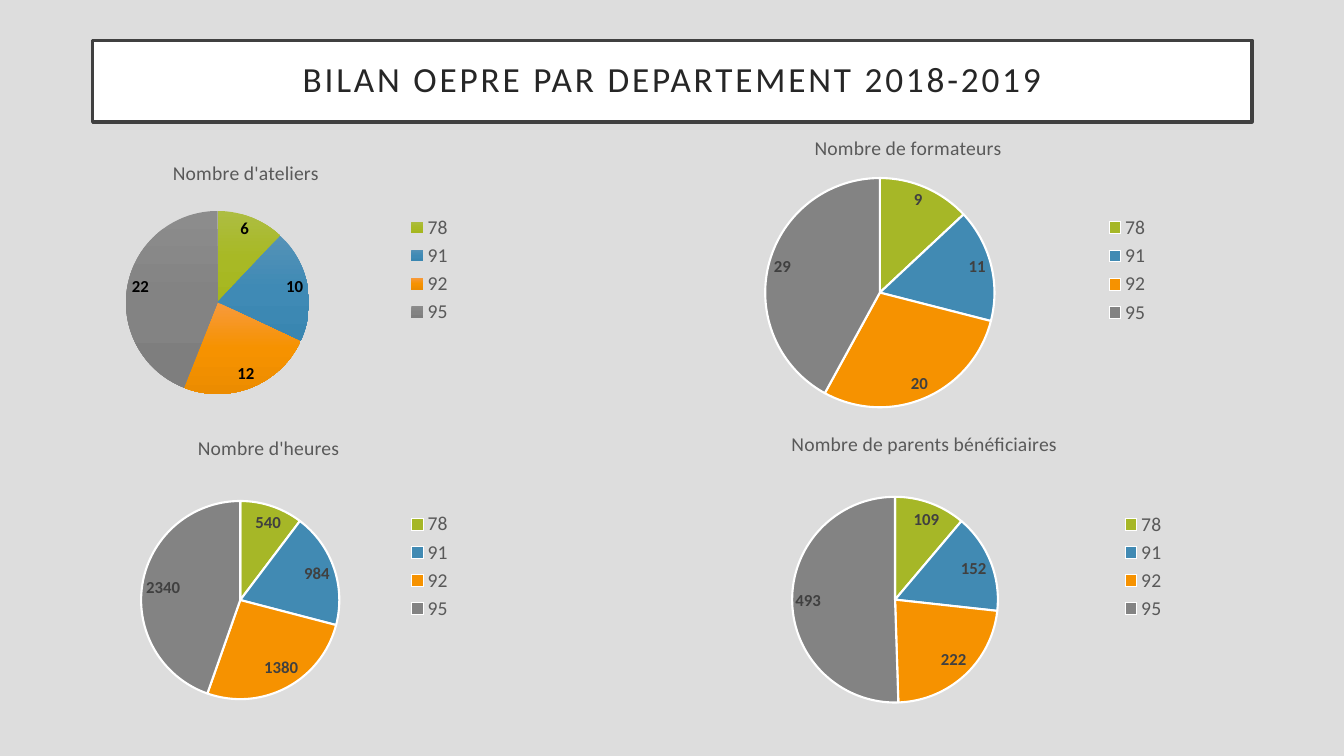
from copy import deepcopy
from dataclasses import dataclass

from pptx import Presentation
from pptx.chart.chart import Chart
from pptx.chart.data import CategoryChartData
from pptx.chart.point import Point
from pptx.chart.series import PieSeries
from pptx.dml.color import RGBColor
from pptx.enum.chart import XL_CHART_TYPE, XL_LABEL_POSITION, XL_LEGEND_POSITION
from pptx.enum.text import MSO_ANCHOR, MSO_AUTO_SIZE, PP_ALIGN
from pptx.oxml import parse_xml
from pptx.oxml.ns import nsdecls, qn
from pptx.slide import Slide
from pptx.util import Emu, Inches, Pt

PIE = XL_CHART_TYPE.PIE
BEST_FIT = XL_LABEL_POSITION.BEST_FIT
LEGEND_RIGHT = XL_LEGEND_POSITION.RIGHT
MIDDLE = MSO_ANCHOR.MIDDLE
CENTER = PP_ALIGN.CENTER

WHITE = RGBColor(0xFF, 0xFF, 0xFF)
BLACK = RGBColor(0x00, 0x00, 0x00)
BACKGROUND = RGBColor(0xDD, 0xDD, 0xDD)
TITLE_INK = RGBColor(0x26, 0x26, 0x26)
DARK_GREY = RGBColor(0x40, 0x40, 0x40)
TEXT_GREY = RGBColor(0x59, 0x59, 0x59)
SLICE_COLORS = (
    RGBColor(0xA6, 0xB7, 0x27),
    RGBColor(0x41, 0x8A, 0xB3),
    RGBColor(0xF6, 0x92, 0x00),
    RGBColor(0x83, 0x83, 0x83),
)
SLICE_GRADIENTS = (
    (RGBColor(0xAD, 0xBD, 0x42), RGBColor(0xA8, 0xB9, 0x25), RGBColor(0xA5, 0xB6, 0x1F)),
    (RGBColor(0x55, 0x92, 0xB7), RGBColor(0x3F, 0x8A, 0xB5), RGBColor(0x39, 0x86, 0xB1)),
    (RGBColor(0xF7, 0x9A, 0x3D), RGBColor(0xF6, 0x92, 0x00), RGBColor(0xEC, 0x8C, 0x00)),
    (RGBColor(0x8C, 0x8C, 0x8C), RGBColor(0x83, 0x83, 0x83), RGBColor(0x7E, 0x7E, 0x7E)),
)

FONT = "Calibri"
DEPARTMENTS = ("78", "91", "92", "95")
SLIDE_WIDTH, SLIDE_HEIGHT = Inches(13.33), Inches(7.5)
COLUMNS, ROWS = 160, 90


@dataclass(frozen=True)
class Box:
    """An area in grid columns and rows."""
    left: float
    top: float
    width: float
    height: float

    def place(self) -> tuple[Emu, Emu, Emu, Emu]:
        column, row = SLIDE_WIDTH / COLUMNS, SLIDE_HEIGHT / ROWS
        return (Emu(int(self.left * column)), Emu(int(self.top * row)),
                Emu(int(self.width * column)), Emu(int(self.height * row)))


@dataclass(frozen=True)
class DepartmentPie:
    title: str
    values: tuple[int, ...]
    frame: Box
    circle: Box
    label_color: RGBColor = DARK_GREY
    shaded: bool = False


TITLE_BOX = Box(11.04, 4.8, 138, 9.72)
PIES = (
    DepartmentPie("Nombre d'ateliers", (6, 10, 12, 22),
                  Box(3.48, 17.28, 51.6, 29.64), Box(15, 25.12, 21.8, 21.8), BLACK, True),
    DepartmentPie("Nombre de formateurs", (9, 11, 20, 29),
                  Box(78.12, 14.16, 60, 36), Box(91.1, 21.2, 27.3, 27.3)),
    DepartmentPie("Nombre d'heures", (540, 984, 1380, 2340),
                  Box(8.88, 49.92, 46.2, 35.04), Box(16.8, 59.65, 23.6, 23.6)),
    DepartmentPie("Nombre de parents bénéficiaires", (109, 152, 222, 493),
                  Box(80.04, 49.44, 60, 36), Box(94.3, 59.15, 24.5, 24.5)),
)


def apply_format(target: object, values: dict[str, object]) -> None:
    for name, value in values.items():
        setattr(target, name, value)


def style_font(font: object, size: float, color: RGBColor, bold: bool = False) -> None:
    apply_format(font, {"name": FONT, "size": Pt(size), "bold": bold})
    font.color.rgb = color


def add_title(slide: Slide, text: str) -> None:
    title = slide.shapes.title
    apply_format(title, dict(zip(("left", "top", "width", "height"), TITLE_BOX.place())))
    title.fill.solid()
    title.fill.fore_color.rgb = WHITE
    title.line.color.rgb = DARK_GREY
    title.line.width = Pt(2.5)
    margins = dict.fromkeys(
        ("margin_left", "margin_top", "margin_right", "margin_bottom"), Inches(0.2))
    apply_format(title.text_frame, {
        "text": text, "word_wrap": True, "vertical_anchor": MIDDLE,
        "auto_size": MSO_AUTO_SIZE.NONE, **margins})
    paragraph = title.text_frame.paragraphs[0]
    apply_format(paragraph, {"alignment": CENTER, "line_spacing": 0.9})
    run = paragraph.runs[0]
    style_font(run.font, 25.2, TITLE_INK)
    run.font._element.set("spc", "200")  # letter spacing of 2 points


def place_circle(chart: Chart, pie: DepartmentPie) -> None:
    """Fix the pie inside its frame, as shares of the frame."""
    frame, circle = pie.frame, pie.circle
    shares = {
        "x": (circle.left - frame.left) / frame.width,
        "y": (circle.top - frame.top) / frame.height,
        "w": circle.width / frame.width,
        "h": circle.height / frame.height,
    }
    modes = '<c:xMode val="edge"/><c:yMode val="edge"/>'
    sizes = "".join(f'<c:{name} val="{share:.4f}"/>' for name, share in shares.items())
    layout = parse_xml(
        f'<c:layout {nsdecls("c")}><c:manualLayout><c:layoutTarget val="inner"/>'
        f"{modes}{sizes}</c:manualLayout></c:layout>")
    plot_area = chart._chartSpace.chart.plotArea
    for automatic in plot_area.findall(qn("c:layout")):
        plot_area.remove(automatic)
    plot_area.insert(0, layout)


def shade_slice(series: PieSeries, point: Point, colors: tuple[RGBColor, ...]) -> None:
    fill = point.format.fill
    fill.gradient()
    fill.gradient_angle = 270
    stop_list = list(series._element.iter(qn("a:gsLst")))[-1]
    stop_list.append(deepcopy(stop_list[0]))
    for stop, position, color in zip(fill.gradient_stops, (0, 0.5, 1), colors):
        stop.position = position
        stop.color.rgb = color
    point.format.line.fill.background()


def color_slice(point: Point, color: RGBColor) -> None:
    point.format.fill.solid()
    point.format.fill.fore_color.rgb = color
    point.format.line.color.rgb = WHITE
    point.format.line.width = Pt(1.5)


def add_pie(slide: Slide, pie: DepartmentPie) -> None:
    chart_data = CategoryChartData()
    chart_data.categories = DEPARTMENTS
    chart_data.add_series("Series 1", pie.values)
    chart = slide.shapes.add_chart(PIE, *pie.frame.place(), chart_data).chart
    style_font(chart.font, 10, BLACK)
    place_circle(chart, pie)

    # Heading and legend
    chart.has_title = True
    heading = chart.chart_title.text_frame
    heading.text = pie.title
    style_font(heading.paragraphs[0].runs[0].font, 14, TEXT_GREY)
    chart.has_legend = True
    apply_format(chart.legend, {"position": LEGEND_RIGHT, "include_in_layout": False})
    style_font(chart.legend.font, 14, TEXT_GREY)

    # Slices
    plot = chart.plots[0]
    plot.vary_by_categories = True
    series = plot.series[0]
    for index, color in enumerate(SLICE_COLORS):
        point = series.points[index]
        if pie.shaded:
            shade_slice(series, point, SLICE_GRADIENTS[index])
        else:
            color_slice(point, color)

    # Value labels
    labels = series.data_labels
    apply_format(labels, {"show_value": True, "show_percentage": False, "position": BEST_FIT})
    style_font(labels.font, 12, pie.label_color, bold=True)


def main() -> None:
    presentation = Presentation()
    apply_format(presentation, {"slide_width": SLIDE_WIDTH, "slide_height": SLIDE_HEIGHT})
    slide = presentation.slides.add_slide(presentation.slide_layouts.get_by_name("Title Only"))
    slide.background.fill.solid()
    slide.background.fill.fore_color.rgb = BACKGROUND
    add_title(slide, "BILAN OEPRE PAR DEPARTEMENT 2018-2019")
    for pie in PIES:
        add_pie(slide, pie)
    presentation.save("out.pptx")


if __name__ == "__main__":
    main()
